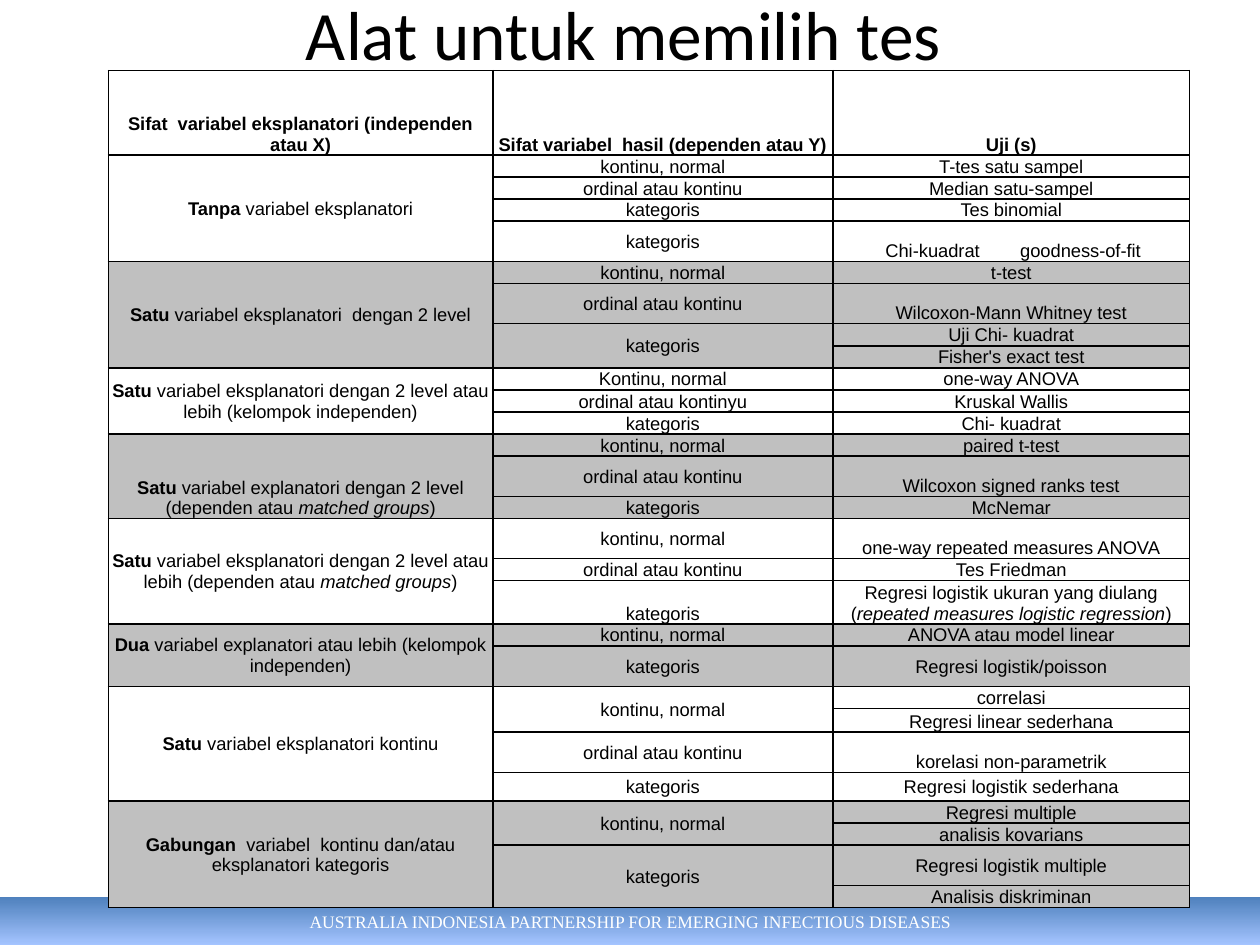
from lxml import etree
from pptx import Presentation
from pptx.dml.color import RGBColor
from pptx.enum.shapes import MSO_SHAPE
from pptx.enum.text import MSO_ANCHOR, MSO_AUTO_SIZE, PP_ALIGN
from pptx.oxml import parse_xml
from pptx.oxml.ns import nsdecls, qn
from pptx.util import Pt

TOP, MIDDLE, BOTTOM = MSO_ANCHOR.TOP, MSO_ANCHOR.MIDDLE, MSO_ANCHOR.BOTTOM
CENTER, LEFT = PP_ALIGN.CENTER, PP_ALIGN.LEFT
RECTANGLE = MSO_SHAPE.RECTANGLE
NO_AUTOFIT = MSO_AUTO_SIZE.NONE

COLORS = {
    "text": "000000",
    "line": "000000",
    "plain": "FFFFFF",
    "shaded": "C0C0C0",
    "footer_top": "4F81BD",
    "footer_bottom": "A4C4FF",
    "footer_text": "FFFFFF",
}
COLUMN_WIDTHS = (219.6, 194.4, 203.8)
HEADER_HEIGHT = 48.2
LOW, HIGH = 12.6, 23.1
OPEN_SIDED_TEST = "Regresi logistik/poisson"
SPACED_TEST = "Chi-kuadrat\tgoodness-of-fit"

HEADERS = (
    "Sifat  variabel eksplanatori (independen atau X)",
    "Sifat variabel  hasil (dependen atau Y)",
    "Uji (s)",
)

# fmt: off
GROUPS = [
    ([("Tanpa ", "b"), ("variabel eksplanatori", "")], MIDDLE, [
        ("kontinu, normal", BOTTOM, [("T-tes satu sampel", BOTTOM, LOW)]),
        ("ordinal atau kontinu", BOTTOM, [("Median satu-sampel", BOTTOM, LOW)]),
        ("kategoris", MIDDLE, [("Tes binomial", MIDDLE, LOW)]),
        ("kategoris", MIDDLE, [(SPACED_TEST, BOTTOM, HIGH)]),
    ]),
    ([("Satu ", "b"), ("variabel eksplanatori  dengan 2 level", "")], MIDDLE, [
        ("kontinu, normal", BOTTOM, [("t-test", BOTTOM, LOW)]),
        ("ordinal atau kontinu", MIDDLE, [("Wilcoxon-Mann Whitney test", BOTTOM, HIGH)]),
        ("kategoris", MIDDLE, [("Uji Chi- kuadrat", BOTTOM, LOW),
                               ("Fisher's exact test", BOTTOM, LOW)]),
    ]),
    ([("Satu ", "b"),
      ("variabel eksplanatori dengan 2 level atau lebih (kelompok independen)", "")], MIDDLE, [
        ("Kontinu, normal", BOTTOM, [("one-way ANOVA", BOTTOM, LOW)]),
        ("ordinal atau kontinyu", BOTTOM, [("Kruskal Wallis", BOTTOM, LOW)]),
        ("kategoris", BOTTOM, [("Chi- kuadrat", BOTTOM, LOW)]),
    ]),
    ([("Satu ", "b"), ("variabel explanatori dengan 2 level (dependen atau ", ""),
      ("matched groups", "i"), (")", "")], BOTTOM, [
        ("kontinu, normal", BOTTOM, [("paired t-test", BOTTOM, LOW)]),
        ("ordinal atau kontinu", MIDDLE, [("Wilcoxon signed ranks test", BOTTOM, HIGH)]),
        ("kategoris", BOTTOM, [("McNemar", BOTTOM, LOW)]),
    ]),
    ([("Satu ", "b"),
      ("variabel eksplanatori dengan 2 level atau lebih (dependen atau ", ""),
      ("matched groups", "i"), (")", "")], MIDDLE, [
        ("kontinu, normal", MIDDLE, [("one-way repeated measures ANOVA", BOTTOM, HIGH)]),
        ("ordinal atau kontinu", BOTTOM, [("Tes Friedman", BOTTOM, LOW)]),
        ("kategoris", BOTTOM, [([("Regresi logistik ukuran yang diulang (", ""),
                                 ("repeated measures logistic regression", "i"),
                                 (")", "")], BOTTOM, 24.7)]),
    ]),
    ([("Dua ", "b"),
      ("variabel explanatori atau lebih (kelompok independen)", "")], MIDDLE, [
        ("kontinu, normal", MIDDLE, [("ANOVA atau model linear", MIDDLE, LOW)]),
        ("kategoris", MIDDLE, [(OPEN_SIDED_TEST, MIDDLE, HIGH)]),
    ]),
    ([("Satu ", "b"), ("variabel eksplanatori kontinu", "")], MIDDLE, [
        ("kontinu, normal", MIDDLE, [("correlasi", BOTTOM, LOW),
                                     ("Regresi linear sederhana", BOTTOM, 13.6)]),
        ("ordinal atau kontinu", MIDDLE, [("korelasi non-parametrik", BOTTOM, HIGH)]),
        ("kategoris", MIDDLE, [("Regresi logistik sederhana", MIDDLE, 16.4)]),
    ]),
    ([("Gabungan  ", "b"),
      ("variabel  kontinu dan/atau eksplanatori kategoris", "")], MIDDLE, [
        ("kontinu, normal", MIDDLE, [("Regresi multiple", BOTTOM, LOW),
                                     ("analisis kovarians", MIDDLE, LOW)]),
        ("kategoris", MIDDLE, [("Regresi logistik multiple", MIDDLE, HIGH),
                               ("Analisis diskriminan", MIDDLE, LOW)]),
    ]),
]
# fmt: on


def color(name):
    return RGBColor.from_string(COLORS[name])


def format_font(font, name, size, color_name):
    font.name, font.size = name, Pt(size)
    font.color.rgb = color(color_name)


def add_title(slide, text):
    title = slide.shapes.title
    title.left, title.top, title.width, title.height = Pt(32.4), Pt(0), Pt(648), Pt(37.4)
    frame = title.text_frame
    frame.text = text
    frame.auto_size = NO_AUTOFIT
    frame.vertical_anchor = MIDDLE
    paragraph = frame.paragraphs[0]
    paragraph.alignment = CENTER
    format_font(paragraph.runs[0].font, "Calibri", 39.6, "text")


def add_footer(slide, text):
    shape = slide.shapes.add_shape(RECTANGLE, Pt(0), Pt(512.6), Pt(720), Pt(27.4))
    shape.shadow.inherit = False
    shape.line.fill.background()
    shape.fill.gradient()
    shape.fill.gradient_angle = 270
    for stop, name in zip(shape.fill.gradient_stops, ("footer_top", "footer_bottom")):
        stop.color.rgb = color(name)
    frame = shape.text_frame
    frame.text = text
    frame.vertical_anchor = MIDDLE
    paragraph = frame.paragraphs[0]
    paragraph.alignment = CENTER
    format_font(paragraph.runs[0].font, "Times New Roman", 10, "footer_text")


def set_borders(cell, open_sides=""):
    properties = cell._tc.get_or_add_tcPr()
    for side in "LRTB":
        paint = "<a:noFill/>"
        if side not in open_sides:
            paint = f'<a:solidFill><a:srgbClr val="{COLORS["line"]}"/></a:solidFill>'
        width = Pt(1)
        properties.append(parse_xml(f'<a:ln{side} {nsdecls("a")} w="{width}">{paint}</a:ln{side}>'))


def style_cell(cell, fill, open_sides=""):
    set_borders(cell, open_sides)
    cell.fill.solid()
    cell.fill.fore_color.rgb = color(fill)
    cell.margin_left = cell.margin_right = cell.margin_top = Pt(0.72)
    cell.margin_bottom = Pt(0)


def write_cell(cell, content, anchor, style=""):
    cell.vertical_anchor = anchor
    paragraph = cell.text_frame.paragraphs[0]
    paragraph.alignment = CENTER
    parts = [(content, style)] if isinstance(content, str) else content
    for text, part_style in parts:
        run = paragraph.add_run()
        run.text = text
        format_font(run.font, "Arial", 10.5, "text")
        run.font.bold = part_style == "b"
        run.font.italic = part_style == "i"


def align_with_tab(cell, indent, position):
    cell.margin_left = Pt(indent)
    paragraph = cell.text_frame.paragraphs[0]
    paragraph.alignment = LEFT
    tabs = etree.SubElement(paragraph._p.get_or_add_pPr(), qn("a:tabLst"))
    etree.SubElement(tabs, qn("a:tab"), pos=str(Pt(position)), algn="l")


def fill_group(table, first_row, group, fill):
    heading, heading_anchor, outcomes = group
    row = first_row
    for outcome, outcome_anchor, tests in outcomes:
        outcome_row = row
        for test, test_anchor, height in tests:
            table.rows[row].height = Pt(height)
            for column in range(3):
                is_open = column == 2 and test == OPEN_SIDED_TEST
                style_cell(table.cell(row, column), fill, "R" if is_open else "")
            write_cell(table.cell(row, 2), test, test_anchor)
            if test == SPACED_TEST:
                align_with_tab(table.cell(row, 2), 30, 77)
            row += 1
        write_cell(table.cell(outcome_row, 1), outcome, outcome_anchor)
        if len(tests) > 1:
            table.cell(outcome_row, 1).merge(table.cell(row - 1, 1))
    write_cell(table.cell(first_row, 0), heading, heading_anchor)
    table.cell(first_row, 0).merge(table.cell(row - 1, 0))
    return row


def add_test_table(slide):
    heights = [test[2] for group in GROUPS for outcome in group[2] for test in outcome[2]]
    table = slide.shapes.add_table(
        len(heights) + 1, 3, Pt(62), Pt(40.3),
        Pt(sum(COLUMN_WIDTHS)), Pt(HEADER_HEIGHT + sum(heights)),
    ).table
    table.horz_banding = False
    table.first_row = False
    table.rows[0].height = Pt(HEADER_HEIGHT)
    for index, (width, header) in enumerate(zip(COLUMN_WIDTHS, HEADERS)):
        table.columns[index].width = Pt(width)
        style_cell(table.cell(0, index), "plain")
        write_cell(table.cell(0, index), header, BOTTOM, "b")
    row = 1
    for index, group in enumerate(GROUPS):
        row = fill_group(table, row, group, "shaded" if index % 2 else "plain")


def main():
    presentation = Presentation()
    presentation.slide_width, presentation.slide_height = Pt(720), Pt(540)
    slide = presentation.slides.add_slide(presentation.slide_layouts[5])
    add_footer(slide, "AUSTRALIA INDONESIA PARTNERSHIP FOR EMERGING INFECTIOUS DISEASES")
    add_title(slide, "Alat untuk memilih tes")
    add_test_table(slide)
    presentation.save("out.pptx")


if __name__ == "__main__":
    main()
